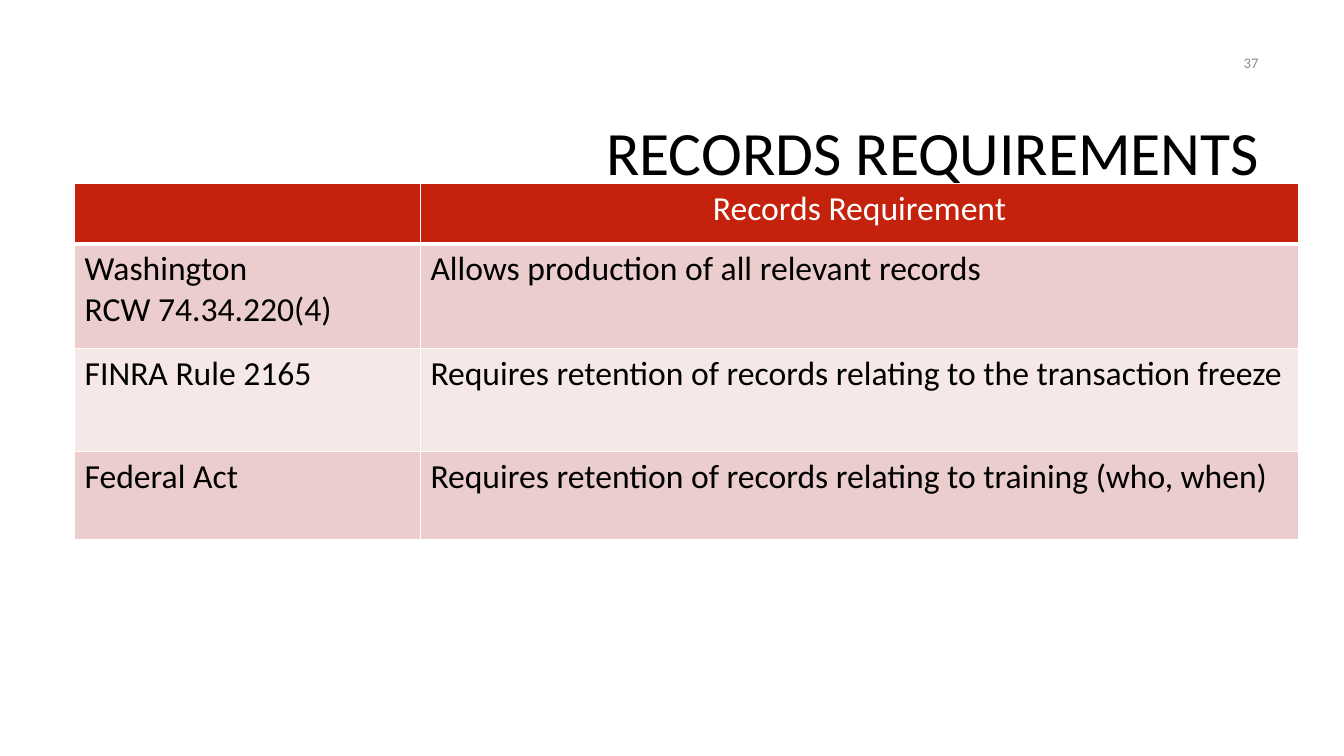
import pptx
import pptx.util
import pptx.dml.color
import pptx.enum.text
from lxml import etree

Inches = pptx.util.Inches
ALIGN = pptx.enum.text.PP_ALIGN
NAMESPACE = "{http://schemas.openxmlformats.org/drawingml/2006/main}"


def style(paragraph, size, color, alignment=ALIGN.LEFT):
    paragraph.alignment = alignment
    paragraph.font.name = "Calibri"
    paragraph.font.size = pptx.util.Pt(size)
    paragraph.font.bold = False
    paragraph.font.color.rgb = pptx.dml.color.RGBColor.from_string(color)


presentation = pptx.Presentation()
presentation.slide_width = Inches(13.33)
presentation.slide_height = Inches(7.5)
slide = presentation.slides.add_slide(presentation.slide_layouts[6])

# Title and slide number
labels = [
    ("RECORDS REQUIREMENTS", (3.17, 0.84, 9.42, 1.41), 44, "000000", 0.9),
    ("37", (9.58, 0.42, 3, 0.4), 10.5, "8C8C8C", 1),
]
for text, place, size, color, line_spacing in labels:
    frame = slide.shapes.add_textbox(*map(Inches, place)).text_frame
    frame.word_wrap = True
    frame.vertical_anchor = pptx.enum.text.MSO_ANCHOR.MIDDLE
    paragraph = frame.paragraphs[0]
    paragraph.text = text
    paragraph.line_spacing = line_spacing
    style(paragraph, size, color, ALIGN.RIGHT)

# Requirements table
rows = [
    ("", "Records Requirement"),
    ("Washington\nRCW 74.34.220(4)", "Allows production of all relevant records"),
    ("FINRA Rule 2165", "Requires retention of records relating to the transaction freeze"),
    ("Federal Act", "Requires retention of records relating to training (who, when)"),
]
column_widths = [3.43, 8.71]
row_heights = [0.6, 1.04, 1.02, 0.87]
table = slide.shapes.add_table(
    len(rows), len(column_widths), Inches(0.74), Inches(1.82),
    Inches(sum(column_widths)), Inches(sum(row_heights))).table
for column, width in zip(table.columns, column_widths):
    column.width = Inches(width)

for row_index, texts in enumerate(rows):
    table.rows[row_index].height = Inches(row_heights[row_index])
    is_header = row_index == 0
    fill = "C4220D" if is_header else ("F5E8E7", "EACDCC")[row_index % 2]
    for column_index, text in enumerate(texts):
        cell = table.cell(row_index, column_index)
        cell.text = text
        for paragraph in cell.text_frame.paragraphs:
            style(paragraph, 24, "FFFFFF" if is_header else "000000",
                  ALIGN.CENTER if is_header else ALIGN.LEFT)
        properties = cell._tc.get_or_add_tcPr()
        for side in ("lnL", "lnR", "lnT", "lnB"):
            width = 3 if is_header and side == "lnB" else 1
            border = etree.SubElement(properties, NAMESPACE + side, w=str(pptx.util.Pt(width)))
            border_fill = etree.SubElement(border, NAMESPACE + "solidFill")
            etree.SubElement(border_fill, NAMESPACE + "srgbClr", val="FFFFFF")
        cell.fill.solid()
        cell.fill.fore_color.rgb = pptx.dml.color.RGBColor.from_string(fill)

presentation.save("out.pptx")
